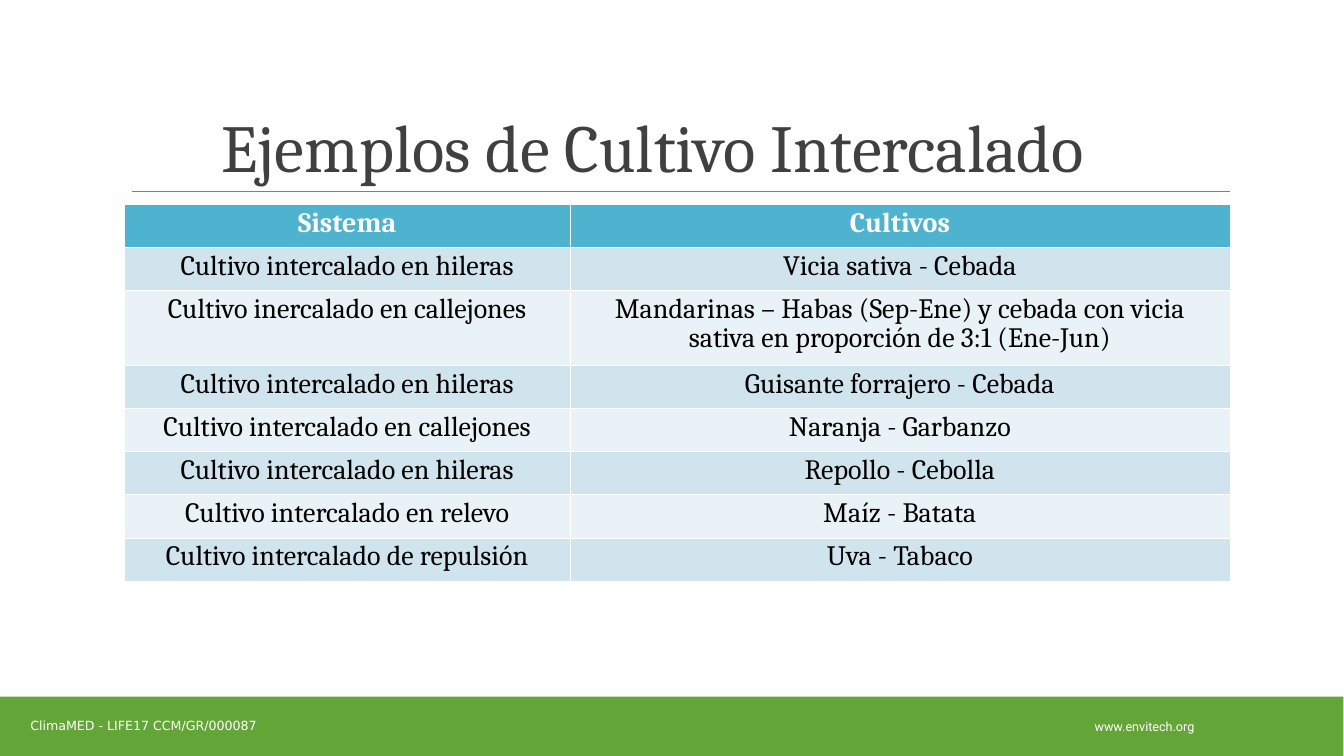
from dataclasses import dataclass

from lxml.etree import SubElement
from pptx import Presentation
from pptx.dml.color import RGBColor as Rgb
from pptx.enum.shapes import MSO_CONNECTOR as Link, MSO_SHAPE as Form
from pptx.enum.text import MSO_ANCHOR as Anchor, PP_ALIGN as Align
from pptx.oxml.ns import qn
from pptx.util import Pt


@dataclass(frozen=True)
class Theme:
    white: str = "FFFFFF"
    black: str = "000000"
    title: str = "404040"
    rule: str = "808080"
    green: str = "63A537"
    head: str = "4EB3CF"
    bands: tuple = ("D0E4ED", "E9F2F6")
    serif: str = "Cambria"
    big: int = 48
    body: int = 20
    small: int = 9


THEME = Theme()

CROPS = [
    ("Sistema", "Cultivos"),
    ("Cultivo intercalado en hileras", "Vicia sativa - Cebada"),
    ("Cultivo inercalado en callejones",
     "Mandarinas – Habas (Sep-Ene) y cebada con vicia sativa en proporción de 3:1 (Ene-Jun)"),
    ("Cultivo intercalado en hileras", "Guisante forrajero - Cebada"),
    ("Cultivo intercalado en callejones", "Naranja - Garbanzo"),
    ("Cultivo intercalado en hileras", "Repollo - Cebolla"),
    ("Cultivo intercalado en relevo", "Maíz - Batata"),
    ("Cultivo intercalado de repulsión", "Uva - Tabaco"),
]
WIDTHS = (318.5, 471.5)
ROW, TALL, LONG = 30.8, 53.7, 2


def write(frame, text, face, size, color, bold=False, lead=1.0):
    frame.text = text
    para = frame.paragraphs[0]
    para.alignment = Align.CENTER
    para.line_spacing = lead
    font = para.runs[0].font
    font.name, font.size, font.bold = face, Pt(size), bold
    font.color.rgb = Rgb.from_string(color)


def add_label(slide, area, text, face, size, color, anchor=Anchor.MIDDLE, lead=1.0):
    frame = slide.shapes.add_textbox(*map(Pt, area)).text_frame
    frame.word_wrap = True
    frame.vertical_anchor = anchor
    write(frame, text, face, size, color, lead=lead)


def add_bar(slide, area, color):
    bar = slide.shapes.add_shape(Form.RECTANGLE, *map(Pt, area))
    bar.shadow.inherit = False
    bar.fill.solid()
    bar.fill.fore_color.rgb = Rgb.from_string(color)
    bar.line.fill.background()


def add_rule(slide, left, right, top):
    rule = slide.shapes.add_connector(Link.STRAIGHT, Pt(left), Pt(top), Pt(right), Pt(top))
    rule.line.color.rgb = Rgb.from_string(THEME.rule)
    rule.line.width = Pt(0.5)
    SubElement(rule._element.spPr, qn("a:effectLst"))


def add_edges(cell):
    props = cell._tc.get_or_add_tcPr()
    for side in "LRTB":
        edge = SubElement(props, qn(f"a:ln{side}"), w=str(Pt(0.06)))
        fill = SubElement(edge, qn("a:solidFill"))
        SubElement(fill, qn("a:srgbClr"), val=THEME.white)


def add_grid(slide, left, top):
    rows = [TALL if i == LONG else ROW for i in range(len(CROPS))]
    size = map(Pt, (left, top, sum(WIDTHS), sum(rows)))
    table = slide.shapes.add_table(len(rows), len(WIDTHS), *size).table
    for col, width in zip(table.columns, WIDTHS):
        col.width = Pt(width)
    for i, texts in enumerate(CROPS):
        table.rows[i].height = Pt(rows[i])
        head = i == 0
        back = THEME.head if head else THEME.bands[(i - 1) % 2]
        ink = THEME.white if head else THEME.black
        for j, text in enumerate(texts):
            cell = table.cell(i, j)
            add_edges(cell)
            cell.fill.solid()
            cell.fill.fore_color.rgb = Rgb.from_string(back)
            write(cell.text_frame, text, THEME.serif, THEME.body, ink, head, 0.9)


def main():
    deck = Presentation()
    deck.slide_width, deck.slide_height = Pt(960.48), Pt(540)
    slide = deck.slides.add_slide(deck.slide_layouts[6])
    add_rule(slide, 94.3, 879.1, 136.8)
    add_bar(slide, (0, 497.5, 960, 42.5), THEME.green)
    add_label(slide, (729.4, 504.7, 177, 29), "www.envitech.org",
              "Roboto", THEME.small, THEME.white)
    add_label(slide, (-11.5, 504, 228, 29), "ClimaMED - LIFE17 CCM/GR/000087",
              "DejaVu Sans", THEME.small, THEME.white)
    add_label(slide, (70.6, 22.3, 792, 114.5), "Ejemplos de Cultivo Intercalado",
              THEME.serif, THEME.big, THEME.title, Anchor.BOTTOM, 0.85)
    add_grid(slide, 88.9, 145.6)
    deck.save("out.pptx")


if __name__ == "__main__":
    main()
